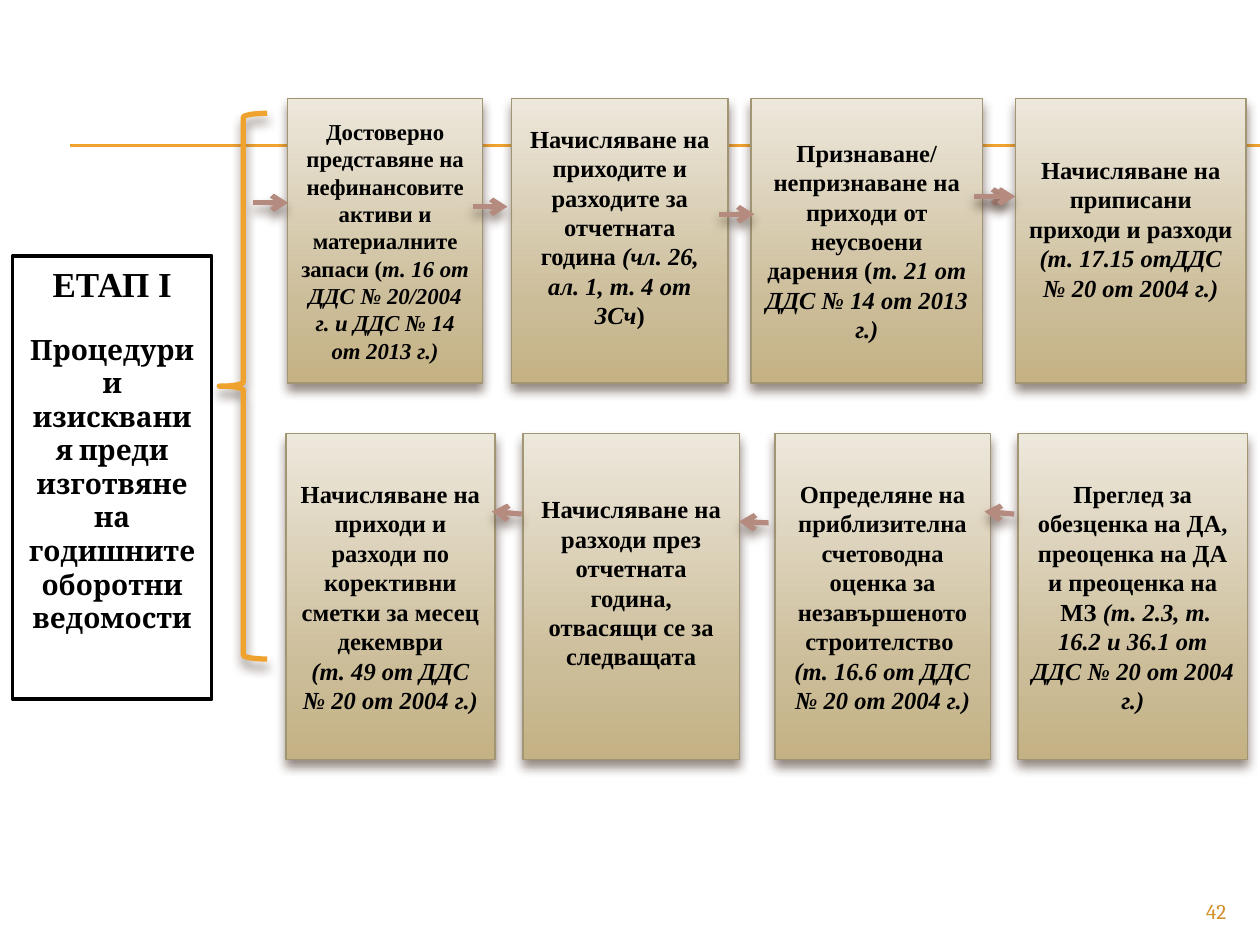
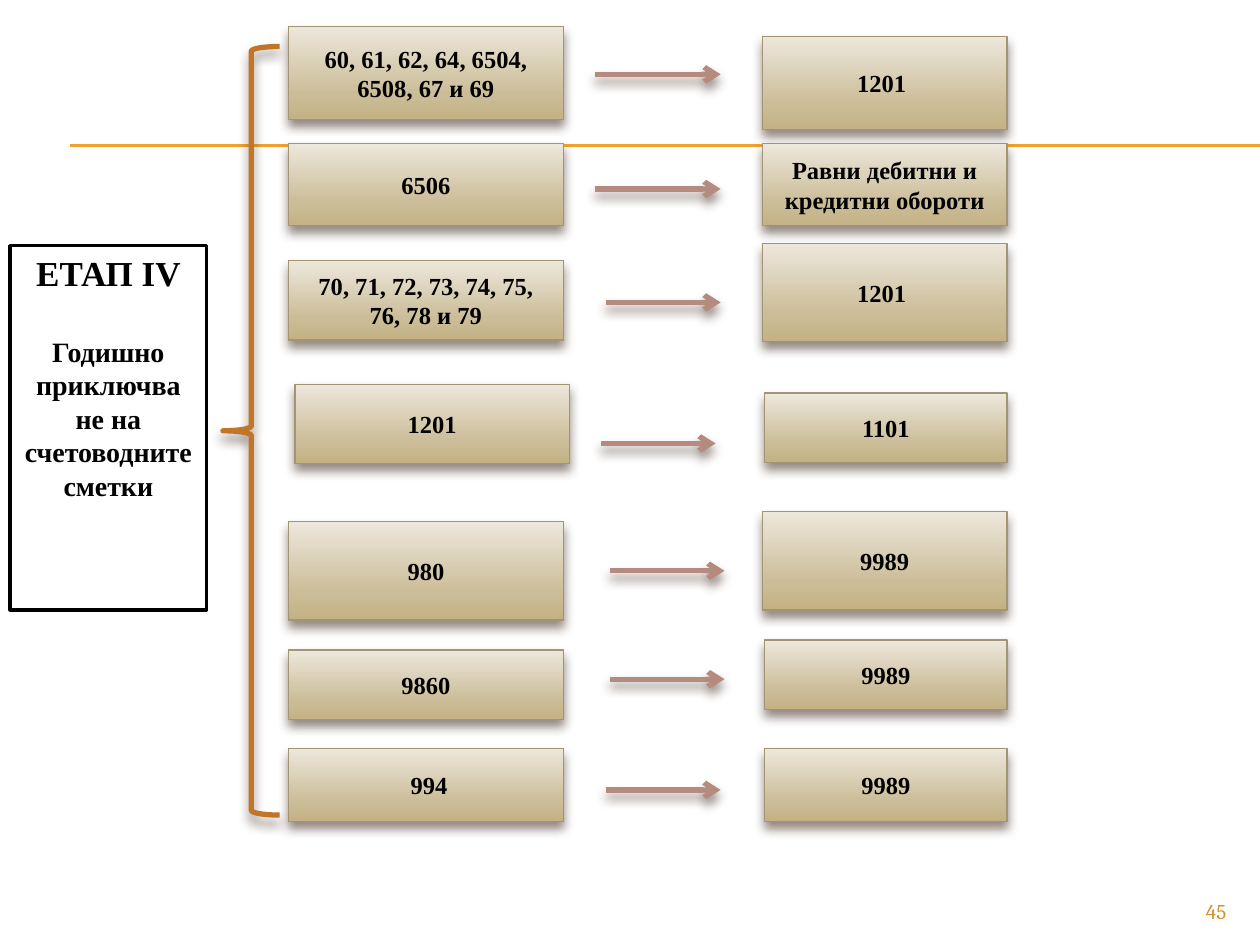
import dataclasses

import lxml.etree
import pptx
import pptx.dml.color
import pptx.enum.shapes
import pptx.enum.text
import pptx.oxml
import pptx.oxml.ns
import pptx.util

Pt = pptx.util.Pt
qn = pptx.oxml.ns.qn
SHAPE = pptx.enum.shapes.MSO_SHAPE
ALIGN = pptx.enum.text.PP_ALIGN
ANCHOR = pptx.enum.text.MSO_ANCHOR


@dataclasses.dataclass(frozen=True)
class Theme:
    serif: str = "Times New Roman"
    heading: str = "Cambria"
    ink: str = "000000"
    paper: str = "FFFFFF"
    gold: str = "F0A22E"
    bronze: str = "C17529"
    number: str = "D48F29"
    arrow: str = "B58B80"
    box_line: str = "A19574"
    shadow: str = "4E3B30"
    box_stops: tuple = ((0, "EDE8DC"), (72, "CCBD99"), (100, "C4B284"))
    stage_size: int = 20
    body_size: int = 16
    box_size: int = 14
    dense_size: int = 13
    number_size: int = 12


T = Theme()


# --- Formatting helpers ---
def rgb(code):
    return pptx.dml.color.RGBColor.from_string(code)


def add_color(parent, code):
    return lxml.etree.SubElement(parent, qn("a:srgbClr"), val=code)


def set_line(s, color, width):
    s.line.color.rgb = rgb(color)
    s.line.width = Pt(width)


def set_gradient(s):
    """Three-stop vertical gradient, directly after the geometry."""
    grad = lxml.etree.SubElement(s._element.spPr, qn("a:gradFill"), rotWithShape="1")
    stops = lxml.etree.SubElement(grad, qn("a:gsLst"))
    for pos, code in T.box_stops:
        add_color(lxml.etree.SubElement(stops, qn("a:gs"), pos=str(pos * 1000)), code)
    lxml.etree.SubElement(grad, qn("a:lin"), ang="5400000", scaled="0")


def set_effects(s, shadow=True):
    """Soft shadow below, or an empty effect list; call after the line is set."""
    effects = lxml.etree.SubElement(s._element.spPr, qn("a:effectLst"))
    if shadow:
        outer = lxml.etree.SubElement(
            effects, qn("a:outerShdw"), blurRad=str(Pt(6)), dist=str(Pt(4)),
            dir="5400000", algn="t", rotWithShape="0")
        lxml.etree.SubElement(add_color(outer, T.shadow), qn("a:alpha"), val="60000")


def write(p, text, size, font=T.serif, color=T.ink, bold=True, align=ALIGN.CENTER):
    """Fill a paragraph; parts between asterisks are italic."""
    p.alignment = align
    for i, part in enumerate(text.split("*")):
        if part:
            r = p.add_run()
            r.text = part
            r.font.color.rgb = rgb(color)
            formats = {"name": font, "size": Pt(size), "bold": bold, "italic": i % 2 == 1}
            for key, value in formats.items():
                setattr(r.font, key, value)


def write_lines(tf, text, size, **formats):
    for i, line in enumerate(text.split("\n")):
        write(tf.add_paragraph() if i else tf.paragraphs[0], line, size, **formats)


# --- Kinds of element ---
def add_rect(slide, left, top, width, height, anchor):
    s = slide.shapes.add_shape(SHAPE.RECTANGLE, Pt(left), Pt(top), Pt(width), Pt(height))
    for key, value in {"word_wrap": True, "vertical_anchor": anchor}.items():
        setattr(s.text_frame, key, value)
    return s


def add_box(slide, left, top, width, height, text, lift=0, size=T.box_size):
    """Gradient box; lift raises the centred text by widening the bottom inset."""
    s = add_rect(slide, left, top, width, height, ANCHOR.MIDDLE)
    set_gradient(s)
    set_line(s, T.box_line, 0.79)
    set_effects(s)
    s.text_frame.margin_bottom = Pt(3.6 + lift)
    write_lines(s.text_frame, text, size)


def add_stage(slide, left, top, width, height, title, body, gap, font):
    s = add_rect(slide, left, top, width, height, ANCHOR.TOP)
    s.shadow.inherit = False
    s.fill.solid()
    s.fill.fore_color.rgb = rgb(T.paper)
    set_line(s, T.ink, 2)
    tf = s.text_frame
    write(tf.paragraphs[0], title, T.stage_size)
    tf.paragraphs[0].space_after = Pt(gap)
    for line in body.split("\n"):
        write(tf.add_paragraph(), line, T.body_size, font=font)


def add_brace(slide, left, top, width, height, color):
    s = slide.shapes.add_shape(SHAPE.LEFT_BRACE, Pt(left), Pt(top), Pt(width), Pt(height))
    s.fill.background()
    set_line(s, color, 3)
    set_effects(s)


def add_line(slide, x1, y1, x2, y2, color, width):
    s = slide.shapes.add_connector(
        pptx.enum.shapes.MSO_CONNECTOR.STRAIGHT, Pt(x1), Pt(y1), Pt(x2), Pt(y2))
    set_line(s, color, width)
    return s


def add_arrow(slide, x1, y1, x2, y2):
    s = add_line(slide, x1, y1, x2, y2, T.arrow, 3)
    lxml.etree.SubElement(s.line._get_or_add_ln(), qn("a:tailEnd"), type="arrow")
    set_effects(s)


def new_slide(prs, number):
    """Blank slide with the shared double rule and page number."""
    slide = prs.slides.add_slide(prs.slide_layouts[6])
    for y in (82.8, 83.5):
        set_effects(add_line(slide, 40.3, y, 720, y, T.gold, 0.75), shadow=False)
    s = slide.shapes.add_textbox(Pt(648), Pt(509.8), Pt(59.8), Pt(19.4))
    s.text_frame.word_wrap = True
    write_lines(s.text_frame, number, T.number_size, font=T.heading,
                color=T.number, bold=False, align=ALIGN.RIGHT)
    return slide


# --- Slides ---
def build_procedures(prs):
    slide = new_slide(prs, "42")

    # Top row runs right, bottom row runs back left: left, width, text, lift, size
    top_row = [
        (164.2, 111.6, "Достоверно представяне на нефинансовите активи и материалните "
         "запаси (*т. 16 от ДДС № 20/2004 г. и ДДС № 14 от 2013 г.)*", 0, T.dense_size),
        (292.3, 123.8, "Начисляване на приходите и разходите за отчетната година "
         "*(чл. 26, ал. 1, т. 4 от ЗСч*)", 16, T.box_size),
        (429.1, 132.5, "Признаване/непризнаване на приходи от неусвоени дарения "
         "(*т. 21 от ДДС № 14 от 2013 г.)*", 0, T.box_size),
        (580.3, 131.8, "Начисляване на приписани приходи и разходи\n"
         "*(т. 17.15 отДДС № 20 от 2004 г.)*", 14, T.box_size),
    ]
    bottom_row = [
        (163.4, 119.5, "Начисляване на приходи и разходи по корективни сметки за месец "
         "декември\n*(т. 49 от ДДС № 20 от 2004 г.)*", 0, T.box_size),
        (298.8, 123.8, "Начисляване на разходи през отчетната година, отвасящи се за "
         "следващата", 16, T.box_size),
        (442.8, 123.1, "Определяне на приблизителна счетоводна оценка за незавършеното "
         "строителство \n*(т. 16.6 от ДДС № 20 от 2004 г.)*", 0, T.box_size),
        (581.8, 131, "Преглед за обезценка на ДА, преоценка на ДА и преоценка на\n"
         " МЗ* (т. 2.3, т. 16.2 и 36.1 от ДДС № 20 от 2004 г.)*", 0, T.box_size),
    ]
    for top, height, row in ((56.2, 162.7, top_row), (247.7, 186.5, bottom_row)):
        for left, width, text, lift, size in row:
            add_box(slide, left, top, width, height, text, lift, size)

    add_brace(slide, 125.3, 64.8, 27.4, 311.8, T.gold)
    add_stage(slide, 7.2, 146.2, 113.8, 253.4, "ЕТАП I",
              "Процедури и изисквания преди изготвяне на годишните оборотни ведомости",
              16, T.heading)

    # Arrows between neighbouring boxes
    for x, y in ((144.7, 115.9), (270, 118.1), (411.1, 122.4), (556.6, 112.3), (560.2, 112.3)):
        add_arrow(slide, x, y, x + 20, y)
    for x, y, rise in ((579.6, 293.8, 1.5), (439.2, 298.8, 0.7), (298.1, 293.8, 1.5)):
        add_arrow(slide, x, y, x - 17, y - rise)


def build_closing(prs):
    slide = new_slide(prs, "45")
    right_edge = 575.5

    # Each row: (left, top, height, text) from and to, then arrow (x, y, length)
    rows = [
        ((164.9, 15.1, 53.3, "60, 61, 62, 64, 6504, 6508, 67 и 69"),
         (435.6, 20.9, 53.3, "1201 "), (339.8, 42.5, 72)),
        ((164.9, 82.1, 46.8, "6506"),
         (435.6, 82.1, 46.8, "Равни дебитни и кредитни обороти"), (339.8, 108, 72)),
        ((164.9, 149, 45.4, "70, 71, 72, 73, 74, 75, 76, 78 и 79"),
         (435.6, 139, 56.2, "1201 "), (346.3, 172.8, 65.5)),
        ((168.5, 219.6, 45.4, "1201"),
         (437, 224.6, 39.6, "1101"), (343.4, 253.4, 65.5)),
        ((164.9, 298.1, 56.2, "980"),
         (435.6, 292.3, 56.2, "9989"), (348.5, 326.2, 65.5)),
        ((164.9, 371.5, 39.6, "9860"),
         (437, 365.8, 39.6, "9989"), (348.5, 388.1, 65.5)),
        ((164.9, 427.7, 41.8, " 994"),
         (437, 427.7, 41.8, "9989"), (346.3, 451.4, 65.5)),
    ]
    for source, target, (x, y, length) in rows:
        for (left, top, height, text), width in ((source, 157), (target, right_edge - target[0])):
            add_box(slide, left, top, width, height, text)
        add_arrow(slide, x, y, x + length, y)

    add_brace(slide, 127.4, 26.6, 32.4, 439.2, T.bronze)
    add_stage(slide, 5.8, 140.4, 112.3, 208.1, "ЕТАП IV",
              "Годишно приключва\nне на счетоводните сметки", 23, T.serif)


def main():
    prs = pptx.Presentation()
    prs.slide_width, prs.slide_height = Pt(720), Pt(540)
    build_procedures(prs)
    build_closing(prs)
    prs.save("out.pptx")


if __name__ == "__main__":
    main()
